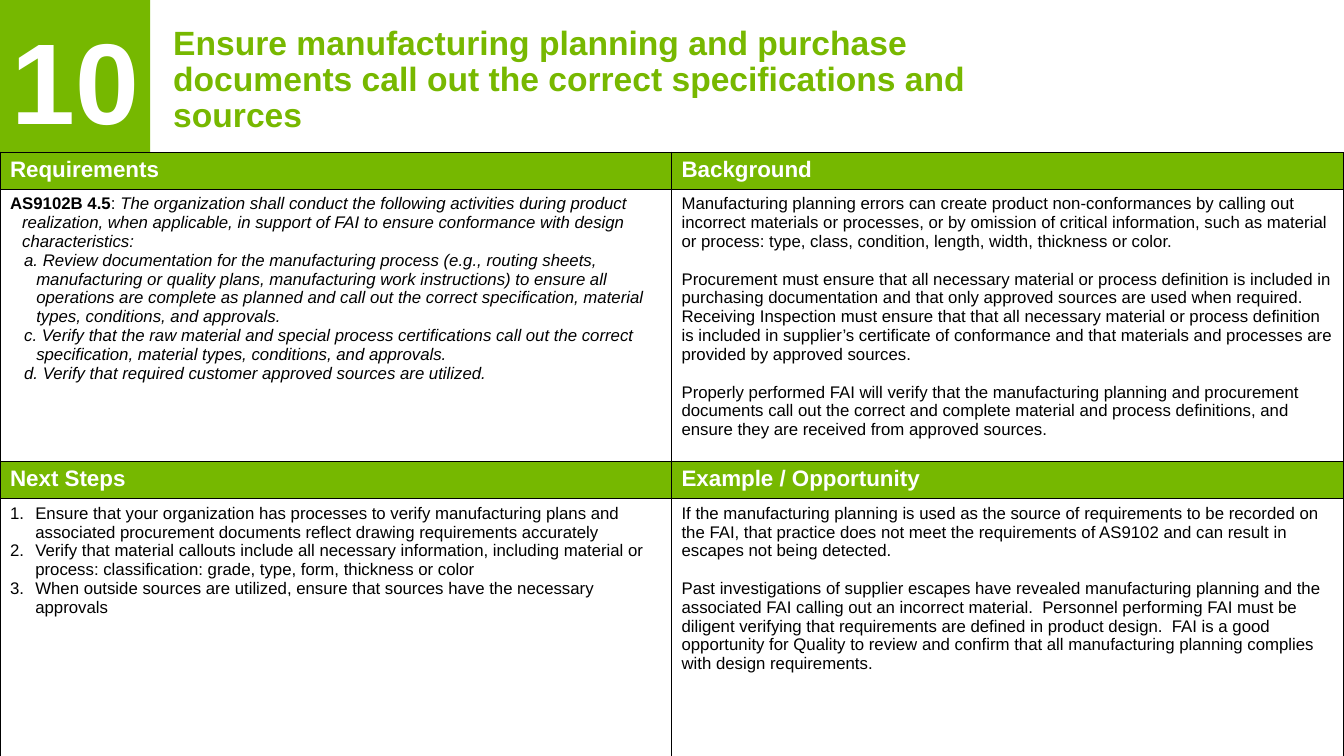
from lxml import etree
from pptx import Presentation
from pptx.dml.color import RGBColor
from pptx.enum.shapes import MSO_SHAPE
from pptx.enum.text import MSO_ANCHOR, PP_ALIGN
from pptx.oxml.ns import qn
from pptx.util import Inches, Pt

RECT = MSO_SHAPE.RECTANGLE
MIDDLE, BOTTOM = MSO_ANCHOR.MIDDLE, MSO_ANCHOR.BOTTOM
CENTER = PP_ALIGN.CENTER

# Content
FONT = "Arial"
GREEN, TITLE_GREEN, WHITE, BLACK = "76B800", "77B800", "FFFFFF", "000000"
NUMBER = "10"
TITLE = ("Ensure manufacturing planning and purchase documents call out "
         "the correct specifications and sources")

# Each paragraph is a list of (text, style); style holds b and/or i
REQUIREMENTS = [
    [("AS9102B 4.5", "b"), (": ", ""),
     ("The organization shall conduct the following activities during product realization, when "
      "applicable, in support of FAI to ensure conformance with design characteristics:", "i")],
    [("a. Review documentation for the manufacturing process (e.g., routing sheets, manufacturing or "
      "quality plans, manufacturing work instructions) to ensure all operations are complete as planned "
      "and call out the correct specification, material types, conditions, and approvals.", "i")],
    [("c. Verify that the raw material and special process certifications call out the correct "
      "specification, material types, conditions, and approvals.", "i")],
    [("d. Verify that required customer approved sources are utilized.", "i")],
]
BACKGROUND = [
    [("Manufacturing planning errors can create product non-conformances by calling out incorrect "
      "materials or processes, or by omission of critical information, such as material or process: "
      "type, class, condition, length, width, thickness or color.", "")],
    [("Procurement must ensure that all necessary material or process definition is included in "
      "purchasing documentation and that only approved sources are used when required. Receiving "
      "Inspection must ensure that that all necessary material or process definition is included in "
      "supplier’s certificate of conformance and that materials and processes are provided by approved "
      "sources.", "")],
    [("Properly performed FAI will verify that the manufacturing planning and procurement documents "
      "call out the correct and complete material and process definitions, and ensure they are "
      "received from approved sources.", "")],
]
NEXT_STEPS = [
    [("Ensure that your organization has processes to verify manufacturing plans and associated "
      "procurement documents reflect drawing requirements accurately", "")],
    [("Verify that material callouts include all necessary information, including material or process: "
      "classification: grade, type, form, thickness or color", "")],
    [("When outside sources are utilized, ensure that sources have the necessary approvals", "")],
]
EXAMPLE = [
    [("If the manufacturing planning is used as the source of requirements to be recorded on the FAI, "
      "that practice does not meet the requirements of AS9102 and can result in escapes not being "
      "detected.", "")],
    [("Past investigations of supplier escapes have revealed manufacturing planning and the associated "
      "FAI calling out an incorrect material.  Personnel performing FAI must be diligent verifying that "
      "requirements are defined in product design.  FAI is a good opportunity for Quality to review and "
      "confirm that all manufacturing planning complies with design requirements.", "")],
]

# Heading, paragraphs, left indents (inches), hanging indent, numbered, gap (points)
PANELS = [
    ("Requirements", REQUIREMENTS, [0.12, 0.26, 0.26, 0.26], 0.12, False, 0),
    ("Background", BACKGROUND, [0, 0, 0], 0, False, 13.5),
    ("Next Steps", NEXT_STEPS, [0.25, 0.25, 0.25], 0.25, True, 0),
    ("Example / Opportunity", EXAMPLE, [0, 0], 0, False, 13.5),
]

# Layout
SLIDE_W, SLIDE_H = 13.33, 7.5
BAND_H = 1.51
COLS = [6.66, 6.67]
ROWS = [0.37, 2.7, 0.37, 2.56]


def rgb(hex_color):
    return RGBColor.from_string(hex_color)


def add_run(p, text, size, color, bold=False, italic=False):
    r = p.add_run()
    r.text = text
    r.font.name, r.font.size = FONT, Pt(size)
    r.font.bold, r.font.italic = bold, italic
    r.font.color.rgb = rgb(color)


def set_borders(cell):
    tcPr = cell._tc.get_or_add_tcPr()
    for side in ("a:lnL", "a:lnR", "a:lnT", "a:lnB"):
        ln = etree.SubElement(tcPr, qn(side), w=str(Pt(1)))
        fill = etree.SubElement(ln, qn("a:solidFill"))
        etree.SubElement(fill, qn("a:srgbClr"), val=BLACK)


def fill_body(tf, paragraphs, indents, hang, numbered, gap):
    for i, (runs, left) in enumerate(zip(paragraphs, indents)):
        p = tf.add_paragraph() if i else tf.paragraphs[0]
        pPr = p._p.get_or_add_pPr()
        pPr.set("marL", str(Inches(left)))
        pPr.set("indent", str(-Inches(hang)))
        if numbered:
            etree.SubElement(pPr, qn("a:buFont"), typeface=FONT)
            etree.SubElement(pPr, qn("a:buAutoNum"), type="arabicPeriod")
        if i and gap:
            p.space_before = Pt(gap)
        for text, style in runs:
            add_run(p, text, 12, BLACK, "b" in style, "i" in style)


prs = Presentation()
prs.slide_width, prs.slide_height = Inches(SLIDE_W), Inches(SLIDE_H)
s = prs.slides.add_slide(prs.slide_layouts[6])

# Title
tf = s.shapes.add_textbox(Inches(1.62), Inches(0.19), Inches(9.24), Inches(1.22)).text_frame
tf.word_wrap = True
tf.vertical_anchor = MIDDLE
p = tf.paragraphs[0]
p.line_spacing = 0.9
add_run(p, TITLE, 24, TITLE_GREEN, bold=True)

# Number block
sp = s.shapes.add_shape(RECT, 0, 0, Inches(1.49), Inches(BAND_H))
sp.shadow.inherit = False
sp.fill.solid()
sp.fill.fore_color.rgb = rgb(GREEN)
sp.line.fill.background()
tf = sp.text_frame
tf.word_wrap = False
tf.vertical_anchor = BOTTOM
p = tf.paragraphs[0]
p.alignment = CENTER
add_run(p, NUMBER, 82, WHITE, bold=True)

# Four panels in one table: each is a heading cell above a body cell
table = s.shapes.add_table(len(ROWS), len(COLS), 0, Inches(BAND_H),
                           Inches(sum(COLS)), Inches(sum(ROWS))).table
table.first_row = table.horz_banding = False
for column, width in zip(table.columns, COLS):
    column.width = Inches(width)
for row, height in zip(table.rows, ROWS):
    row.height = Inches(height)

for i, (heading, *body) in enumerate(PANELS):
    row, col = 2 * (i // 2), i % 2
    head_cell, body_cell = table.cell(row, col), table.cell(row + 1, col)
    set_borders(head_cell)
    set_borders(body_cell)
    head_cell.fill.solid()
    head_cell.fill.fore_color.rgb = rgb(GREEN)
    body_cell.fill.background()
    add_run(head_cell.text_frame.paragraphs[0], heading, 16, WHITE, bold=True)
    fill_body(body_cell.text_frame, *body)

prs.save("out.pptx")
